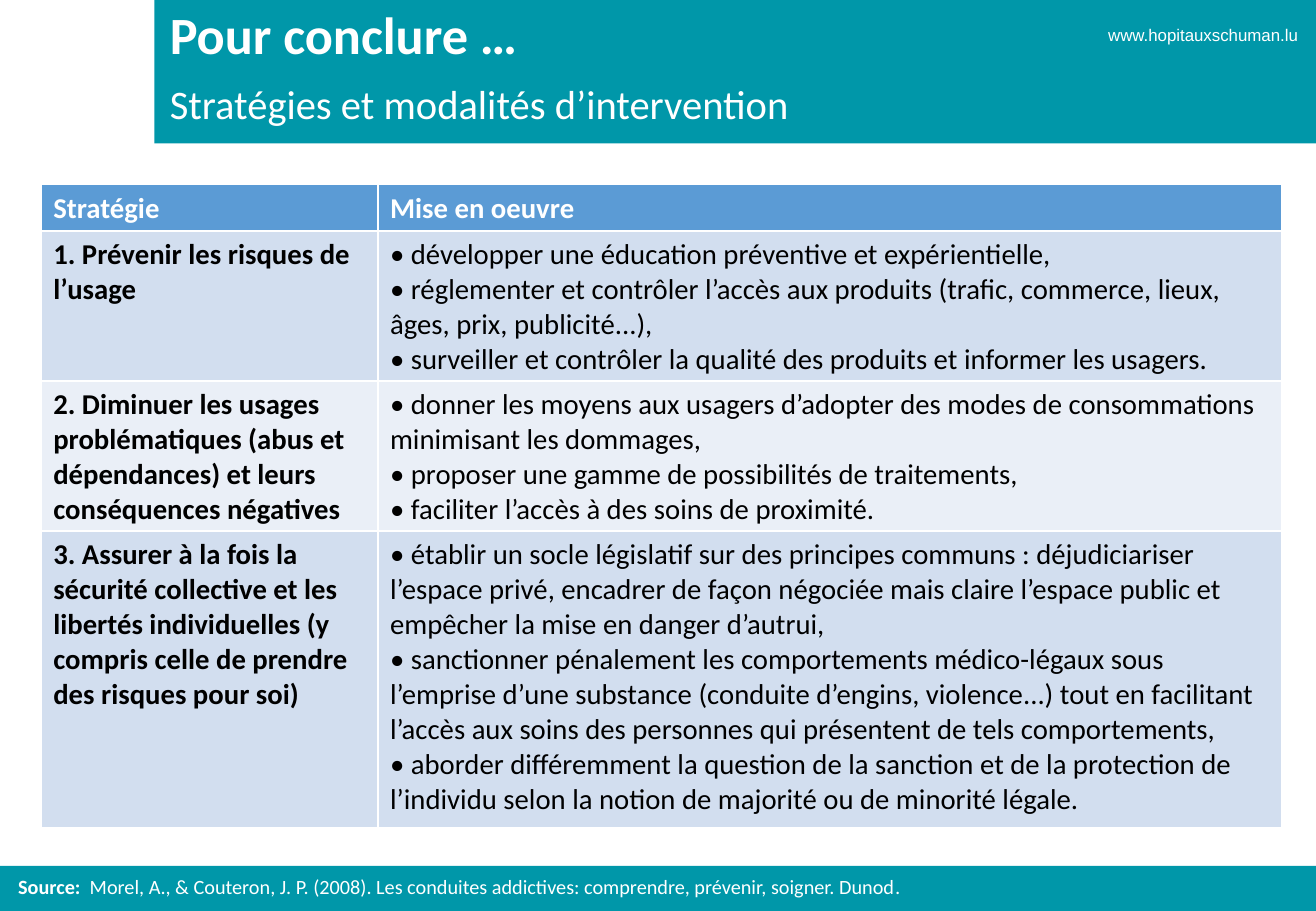
"""Build the concluding slide on intervention strategies."""
import pptx
import pptx.dml.color
import pptx.enum.shapes
import pptx.enum.text
import pptx.util

Cm, Pt = pptx.util.Cm, pptx.util.Pt
ALIGN, ANCHOR = pptx.enum.text.PP_ALIGN, pptx.enum.text.MSO_ANCHOR
WIDTH, HEIGHT = 27.51, 19.05
COLORS = {"teal": "0097A9", "white": "FFFFFF", "black": "000000",
          "header": "5B9BD5", "odd": "D2DEEF", "even": "EAEFF7"}
COLUMN_WIDTHS = (7.04, 18.9)
ROW_HEIGHTS = (0.91, 2.97, 2.97, 6.2)
STRATEGIES = [
    ("Stratégie", ["Mise en oeuvre"]),
    ("1. Prévenir les risques de l’usage", [
        "• développer une éducation préventive et expérientielle,",
        "• réglementer et contrôler l’accès aux produits (trafic, commerce, "
        "lieux, âges, prix, publicité...),",
        "• surveiller et contrôler la qualité des produits et informer les "
        "usagers."]),
    ("2. Diminuer les usages problématiques (abus et dépendances) et leurs "
     "conséquences négatives", [
         "• donner les moyens aux usagers d’adopter des modes de "
         "consommations minimisant les dommages,",
         "• proposer une gamme de possibilités de traitements,",
         "• faciliter l’accès à des soins de proximité."]),
    ("3. Assurer à la fois la sécurité collective et les libertés "
     "individuelles (y compris celle de prendre des risques pour soi)", [
         "• établir un socle législatif sur des principes communs : "
         "déjudiciariser l’espace privé, encadrer de façon négociée mais "
         "claire l’espace public et empêcher la mise en danger d’autrui,",
         "• sanctionner pénalement les comportements médico-légaux sous "
         "l’emprise d’une substance (conduite d’engins, violence...) tout en "
         "facilitant l’accès aux soins des personnes qui présentent de tels "
         "comportements,",
         "• aborder différemment la question de la sanction et de la "
         "protection de l’individu selon la notion de majorité ou de "
         "minorité légale."]),
]


def rgb(name):
    return pptx.dml.color.RGBColor.from_string(COLORS[name])


def set_font(font, size, color="white", bold=False, name="Calibri"):
    font.name, font.size, font.bold = name, Pt(size), bold
    font.color.rgb = rgb(color)


def add_band(s, left, top, width, height):
    sp = s.shapes.add_shape(pptx.enum.shapes.MSO_SHAPE.RECTANGLE,
                            Cm(left), Cm(top), Cm(width), Cm(height))
    sp.shadow.inherit = False
    sp.fill.solid()
    sp.fill.fore_color.rgb = rgb("teal")
    sp.line.fill.background()


def add_text(s, box, text, size, anchor=ANCHOR.TOP, spacing=0.9, **font):
    tf = s.shapes.add_textbox(*map(Cm, box)).text_frame
    tf.word_wrap = True
    tf.vertical_anchor = anchor
    p = tf.paragraphs[0]
    p.line_spacing = spacing
    if text:
        p.add_run().text = text
    set_font(p.font, size, **font)
    return tf


def add_web_address(s):
    tf = add_text(s, (22, 0.51, 5.13, 0.43), "www.hopitauxschuman.lu", 10,
                  spacing=1.0, name="Arial")
    tf.margin_left = tf.margin_right = tf.margin_top = tf.margin_bottom = 0
    tf.paragraphs[0].alignment = ALIGN.RIGHT


def add_source(s):
    tf = add_text(s, (0.13, 18.08, 27.38, 0.84), "", 12, ANCHOR.BOTTOM)
    p = tf.paragraphs[0]
    for text, bold, italic in (
            ("Source: ", True, False),
            (" Morel, A., & Couteron, J. P. (2008). Les conduites addictives: "
             "comprendre, prévenir, soigner. Dunod", False, False),
            (".", False, True)):
        r = p.add_run()
        r.text = text
        r.font.bold, r.font.italic = bold, italic


def fill_cell(cell, lines, fill, color, bold):
    cell.fill.solid()
    cell.fill.fore_color.rgb = rgb(fill)
    cell.text_frame.text = "\n".join(lines)
    for p in cell.text_frame.paragraphs:
        set_font(p.font, 17, color, bold)


def add_strategy_table(s):
    table = s.shapes.add_table(
        len(STRATEGIES), len(COLUMN_WIDTHS), Cm(0.86), Cm(3.86),
        Cm(sum(COLUMN_WIDTHS)), Cm(sum(ROW_HEIGHTS))).table
    for column, width in zip(table.columns, COLUMN_WIDTHS):
        column.width = Cm(width)
    for i, (strategy, actions) in enumerate(STRATEGIES):
        table.rows[i].height = Cm(ROW_HEIGHTS[i])
        header = i == 0
        fill = "header" if header else "odd" if i % 2 else "even"
        color = "white" if header else "black"
        fill_cell(table.cell(i, 0), [strategy], fill, color, True)
        fill_cell(table.cell(i, 1), actions, fill, color, header)


def main():
    prs = pptx.Presentation()
    prs.slide_width, prs.slide_height = Cm(WIDTH), Cm(HEIGHT)
    s = prs.slides.add_slide(prs.slide_layouts[6])
    add_band(s, 3.23, 0, WIDTH - 3.23, 3)
    add_band(s, 0, 18.11, WIDTH, HEIGHT - 18.11)
    add_web_address(s)
    add_text(s, (3.3, 0, 18, 1.5), "Pour conclure …", 31, ANCHOR.BOTTOM,
             bold=True)
    add_text(s, (3.3, 1.65, 23.9, 1), "Stratégies et modalités d’intervention",
             24)
    add_source(s)
    add_strategy_table(s)
    prs.save("out.pptx")


if __name__ == "__main__":
    main()
